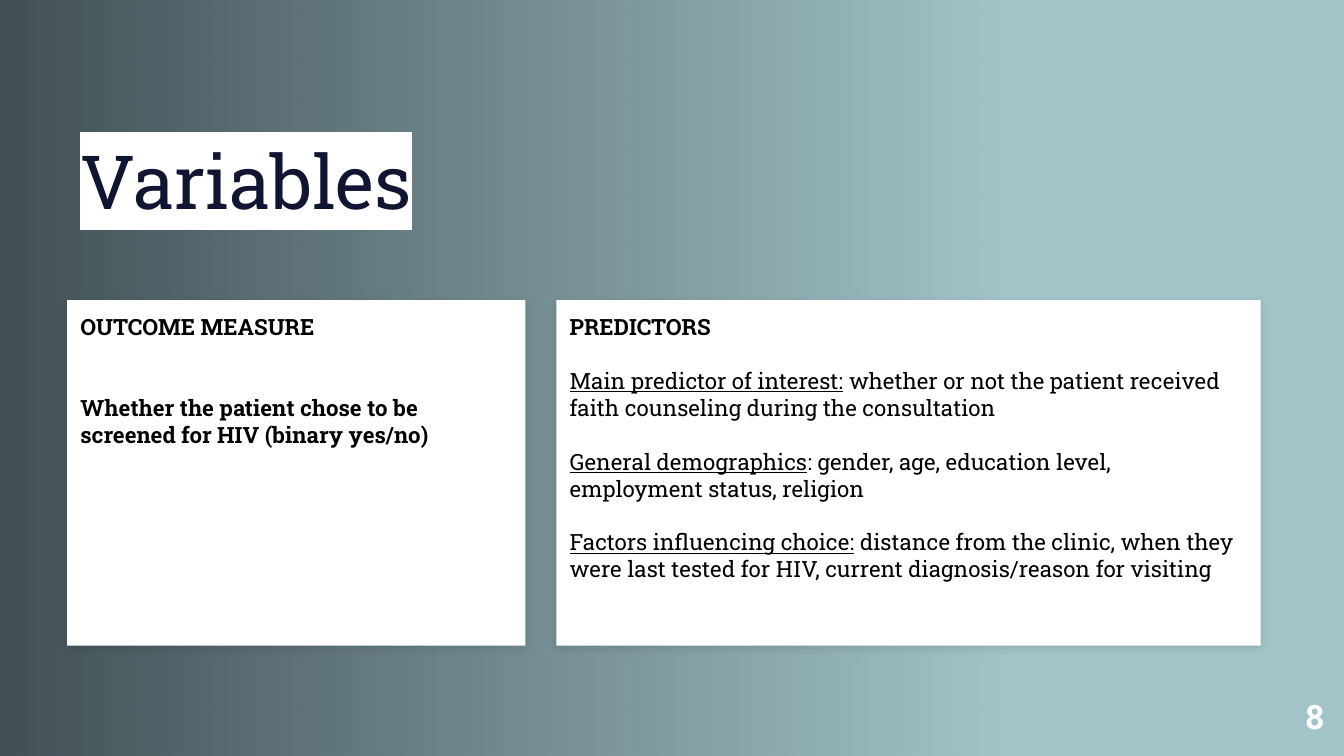
import dataclasses
import typing

import lxml.etree
import pptx
import pptx.dml.color
import pptx.enum.shapes
import pptx.enum.text
import pptx.oxml
import pptx.oxml.ns
import pptx.util

WIDTH = 10
HEIGHT = WIDTH * 9 / 16
FONT = "Roboto Slab"
WHITE, BLACK, NAVY, SHADE, TEAL = "FFFFFF", "000000", "101631", "000208", "A2C4C9"
LINE = 14.4


class Span(typing.NamedTuple):
    """A stretch of text with one format."""
    text: str
    bold: bool = False
    underline: bool = False


class Entry(typing.NamedTuple):
    """A paragraph and the number of lines left open above it."""
    spans: list[Span]
    gap: int = 1


@dataclasses.dataclass
class Card:
    """A white panel, placed by shares of the slide width."""
    left: float
    width: float
    entries: list[Entry]


def predictor(label: str, detail: str) -> Entry:
    """Return an entry with an underlined label."""
    return Entry([Span(label, underline=True), Span(detail)])


CARDS = [
    Card(0.05, 0.341, [
        Entry([Span("OUTCOME MEASURE", bold=True)], gap=0),
        Entry([Span("Whether the patient chose to be screened for HIV (binary yes/no)", bold=True)], gap=2),
    ]),
    Card(0.414, 0.524, [
        Entry([Span("PREDICTORS", bold=True)], gap=0),
        predictor("Main predictor of interest:", " whether or not the patient received faith counseling during the consultation"),
        predictor("General demographics", ": gender, age, education level, employment status, religion"),
        predictor("Factors influencing choice:", " distance from the clinic, when they were last tested for HIV, current diagnosis/reason for visiting"),
    ]),
]


def color(value: str) -> pptx.dml.color.RGBColor:
    """Convert a hex string to a colour."""
    return pptx.dml.color.RGBColor.from_string(value)


def element(xml: str) -> lxml.etree._Element:
    """Parse a DrawingML fragment."""
    return pptx.oxml.parse_xml(xml.replace(" ", f' {pptx.oxml.ns.nsdecls("a")} ', 1))


def box(left: float, top: float, width: float, height: float) -> list[int]:
    """Convert shares of the slide size to lengths."""
    return [pptx.util.Inches(share * side) for share, side in
            ((left, WIDTH), (top, HEIGHT), (width, WIDTH), (height, HEIGHT))]


def add_text(paragraph, text: str, *, size: float = 12, fill: str = BLACK, bold: bool = False,
             underline: bool = False, highlight: str | None = None) -> None:
    """Add a formatted run to a paragraph."""
    run = paragraph.add_run()
    run.text = text
    font = run.font
    font.name, font.size, font.bold, font.underline = FONT, pptx.util.Pt(size), bold, underline
    font.color.rgb = color(fill)
    if highlight:
        latin = run._r.rPr.find(pptx.oxml.ns.qn("a:latin"))
        latin.addprevious(element(f'<a:highlight ><a:srgbClr val="{highlight}"/></a:highlight>'))


def prepare_frame(shape, anchor: pptx.enum.text.MSO_ANCHOR) -> pptx.text.text.TextFrame:
    """Set wrapping, insets and anchor of a shape's text."""
    frame = shape.text_frame
    frame.word_wrap = True
    frame.vertical_anchor = anchor
    frame.margin_left = frame.margin_right = pptx.util.Inches(0.1)
    frame.margin_top = frame.margin_bottom = pptx.util.Inches(0.1)
    return frame


def add_rectangle(slide, bounds: list[int]) -> pptx.shapes.autoshape.Shape:
    """Add a rectangle without line or shadow."""
    shape = slide.shapes.add_shape(pptx.enum.shapes.MSO_SHAPE.RECTANGLE, *bounds)
    shape.shadow.inherit = False
    shape.line.fill.background()
    return shape


def add_shade(slide) -> None:
    """Darken the slide from the left, fading out to the right."""
    shape = add_rectangle(slide, box(0, 0, 0.75, 1))
    shape.fill.gradient()
    shape.fill.gradient_angle = 180
    for stop, position, alpha in zip(shape.fill.gradient_stops, (0, 1), (0, 60000)):
        stop.position = position
        stop.color.rgb = color(SHADE)
        stop._gs[0].append(element(f'<a:alpha val="{alpha}"/>'))


def add_card(slide, card: Card) -> None:
    """Draw a panel with a soft shadow and its entries."""
    shape = add_rectangle(slide, box(card.left, 0.397, card.width, 0.457))
    shape.fill.solid()
    shape.fill.fore_color.rgb = color(WHITE)
    effects = shape._element.spPr.find(pptx.oxml.ns.qn("a:effectLst"))
    effects.append(element(
        '<a:outerShdw blurRad="57150" dist="19050" dir="5400000" algn="bl" rotWithShape="0">'
        f'<a:srgbClr val="{BLACK}"><a:alpha val="10000"/></a:srgbClr></a:outerShdw>'))
    frame = prepare_frame(shape, pptx.enum.text.MSO_ANCHOR.TOP)
    for index, entry in enumerate(card.entries):
        paragraph = frame.add_paragraph() if index else frame.paragraphs[0]
        paragraph.alignment = pptx.enum.text.PP_ALIGN.LEFT
        paragraph.line_spacing = 1.0
        paragraph.space_before = pptx.util.Pt(entry.gap * LINE)
        for span in entry.spans:
            add_text(paragraph, span.text, bold=span.bold, underline=span.underline)


def main() -> None:
    """Build and save the slide."""
    presentation = pptx.Presentation()
    presentation.slide_width = pptx.util.Inches(WIDTH)
    presentation.slide_height = pptx.util.Inches(HEIGHT)
    slide = presentation.slides.add_slide(presentation.slide_layouts[6])
    slide.background.fill.solid()
    slide.background.fill.fore_color.rgb = color(TEAL)
    add_shade(slide)

    title = slide.shapes.add_textbox(*box(0.05, 0.062, 0.5, 0.253))
    paragraph = prepare_frame(title, pptx.enum.text.MSO_ANCHOR.BOTTOM).paragraphs[0]
    paragraph.line_spacing = 1.15
    add_text(paragraph, "Variables", size=40, fill=NAVY, highlight=WHITE)

    for card in CARDS:
        add_card(slide, card)

    number = slide.shapes.add_textbox(*box(0.938, 0.893, 0.057, 0.108))
    paragraph = prepare_frame(number, pptx.enum.text.MSO_ANCHOR.MIDDLE).paragraphs[0]
    paragraph.alignment = pptx.enum.text.PP_ALIGN.RIGHT
    add_text(paragraph, "8", size=18, fill=WHITE, bold=True)

    presentation.save("out.pptx")


if __name__ == "__main__":
    main()
